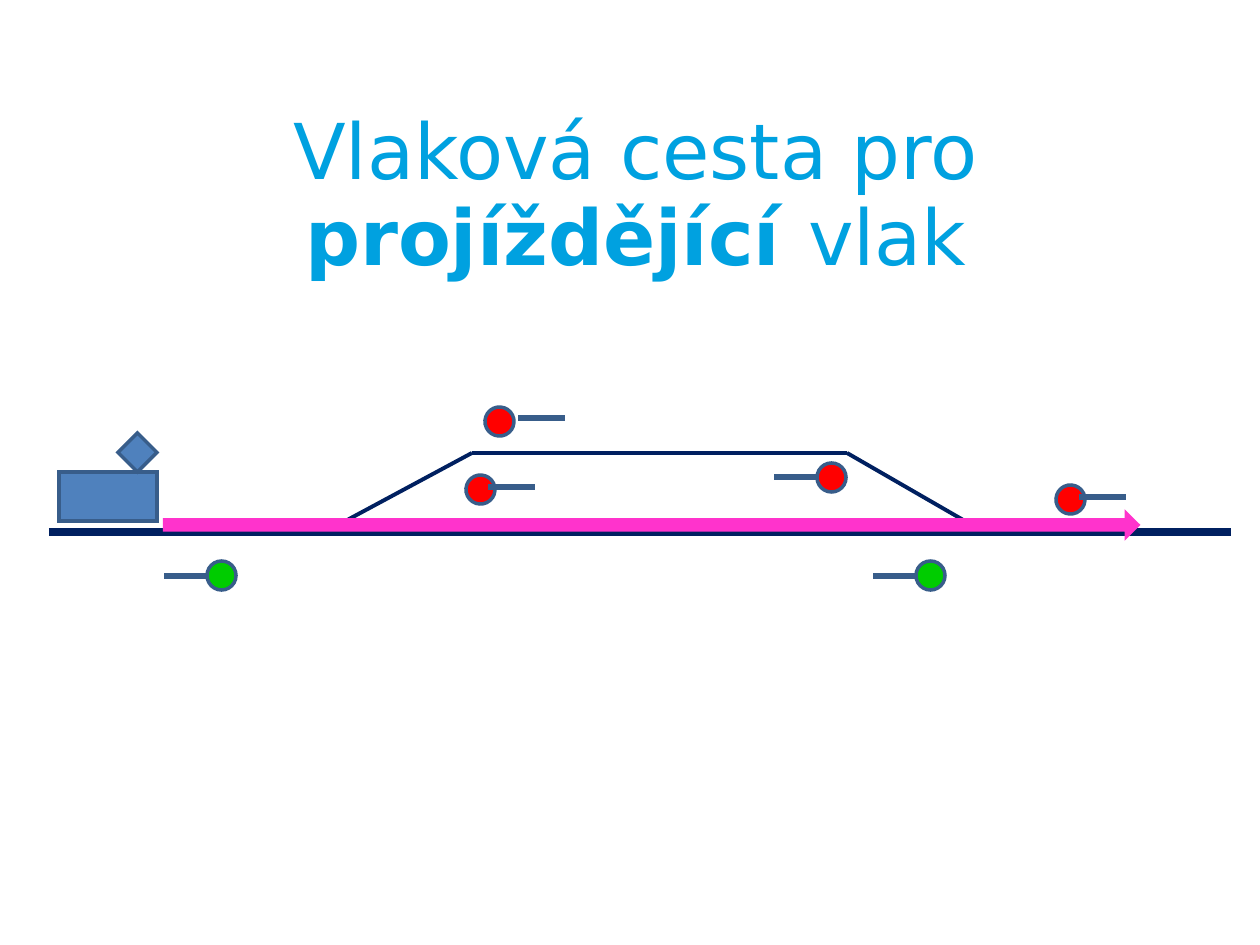
from lxml import etree
from pptx import Presentation
from pptx import util as u
from pptx.dml.color import RGBColor
from pptx.enum import shapes, text
from pptx.oxml.ns import qn

SCALE = 914400 / 126  # EMU per px
COLORS = {
    "track": "002060",
    "route": "FF33CC",
    "steel": "4F81BD",
    "outline": "385D8A",
    "go": "00CC00",
    "stop": "FF0000",
    "title": "00A1E0",
}
FORMS = shapes.MSO_SHAPE


def px(*lengths):
    return [u.Emu(round(length * SCALE)) for length in lengths]


def add_part(form, box, fill, line="outline", weight=2):
    """Add a filled preset shape with mitred corners; box is in px."""
    part = slide.shapes.add_shape(form, *px(*box))
    part.shadow.inherit = False
    part.fill.solid()
    part.fill.fore_color.rgb = RGBColor.from_string(COLORS[fill])
    part.line.color.rgb = RGBColor.from_string(COLORS[line])
    part.line.width = u.Pt(weight)
    etree.SubElement(part.line._get_or_add_ln(), qn("a:miter"), lim="800000")
    return part


prs = Presentation()
prs.slide_width, prs.slide_height = px(1260, 945)
slide = prs.slides.add_slide(prs.slide_layouts[6])

# Main track and passing loop: start, end, weight
tracks = [
    ((49, 532), (1231, 532), 4.5),
    ((325, 532), (472, 453), 2.25),
    ((472, 453), (847, 453), 2.25),
    ((847, 453), (984, 532), 2.25),
]
for start, end, weight in tracks:
    track = slide.shapes.add_connector(
        shapes.MSO_CONNECTOR.STRAIGHT, *px(*start, *end))
    track.line.color.rgb = RGBColor.from_string(COLORS["track"])
    track.line.width = u.Pt(weight)
    etree.SubElement(track._element.spPr, qn("a:effectLst"))

title = slide.shapes.add_textbox(*px(69, 103, 1134, 187)).text_frame
title.word_wrap = True
title.auto_size = text.MSO_AUTO_SIZE.SHAPE_TO_FIT_TEXT
title.vertical_anchor = text.MSO_ANCHOR.MIDDLE
heading = title.paragraphs[0]
heading.alignment = text.PP_ALIGN.CENTER
heading.line_spacing = 0.93
for words, bold in [("Vlaková cesta pro", False), ("projíždějící ", True), ("vlak", False)]:
    if heading.runs and not heading.runs[-1].font.bold:
        heading.add_line_break()
    run = heading.add_run()
    run.text = words
    font_format = {"name": "DejaVu Sans", "size": u.Pt(44), "bold": bold}
    for attribute, value in font_format.items():
        setattr(run.font, attribute, value)
    run.font.color.rgb = RGBColor.from_string(COLORS["title"])

add_part(FORMS.RIGHT_ARROW, (168, 522, 965, 6), "route", "route", 6)

# Signals facing right: post left and top, lamp left and top, aspect
for post, lamp, aspect in [
    ((158, 571), (207, 561), "go"),
    ((768, 472), (817, 463), "stop"),
    ((867, 571), (916, 561), "go"),
]:
    add_part(FORMS.MATH_MINUS, (*post, 59, 10), "steel")
    add_part(FORMS.FLOWCHART_CONNECTOR, (*lamp, 29, 29), aspect)

# Signals facing left, with the post over the lamp
for post, lamp in [
    ((1073, 492), (1056, 485)),
    ((512, 413), (485, 407)),
    ((482, 482), (466, 475)),
]:
    add_part(FORMS.FLOWCHART_CONNECTOR, (*lamp, 29, 29), "stop").rotation = 169
    add_part(FORMS.MATH_MINUS, (*post, 59, 10), "steel")

# Train
add_part(FORMS.FLOWCHART_PROCESS, (59, 472, 98, 49), "steel")
add_part(FORMS.DIAMOND, (118, 433, 39, 39), "steel")

prs.save("out.pptx")
